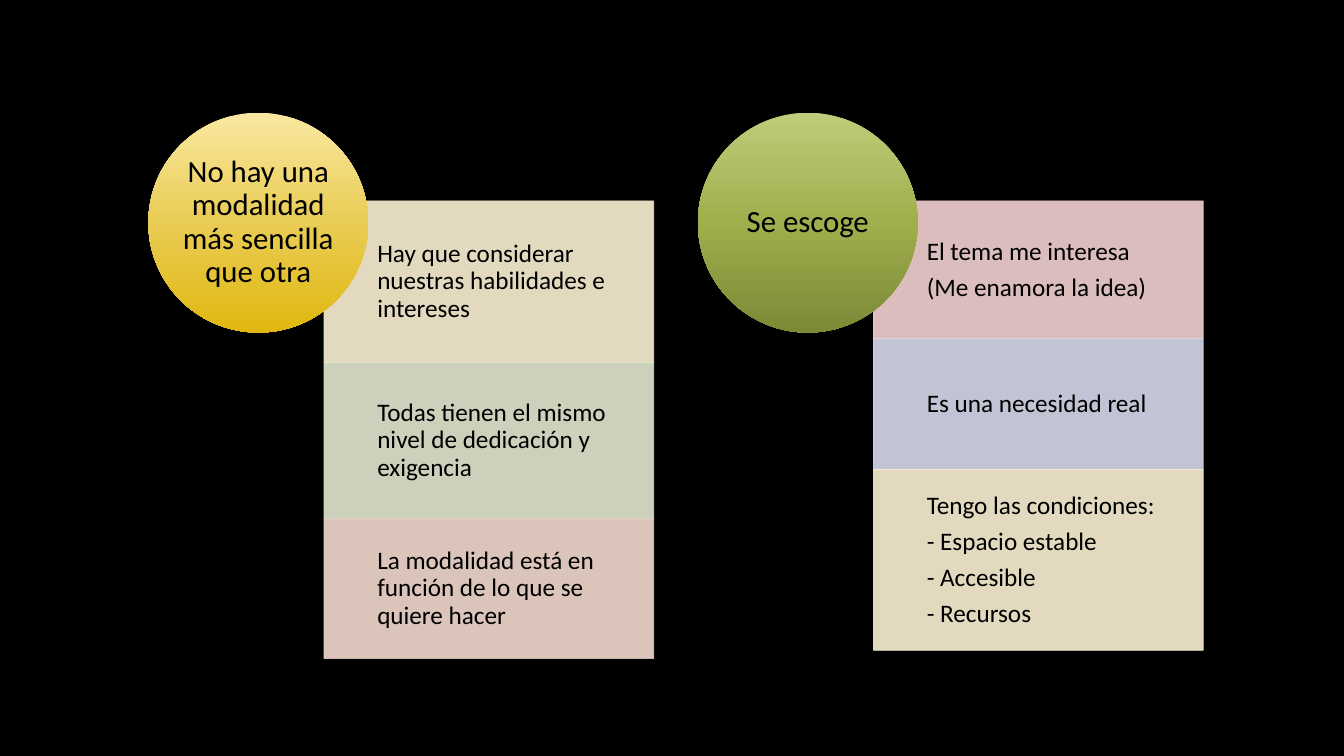
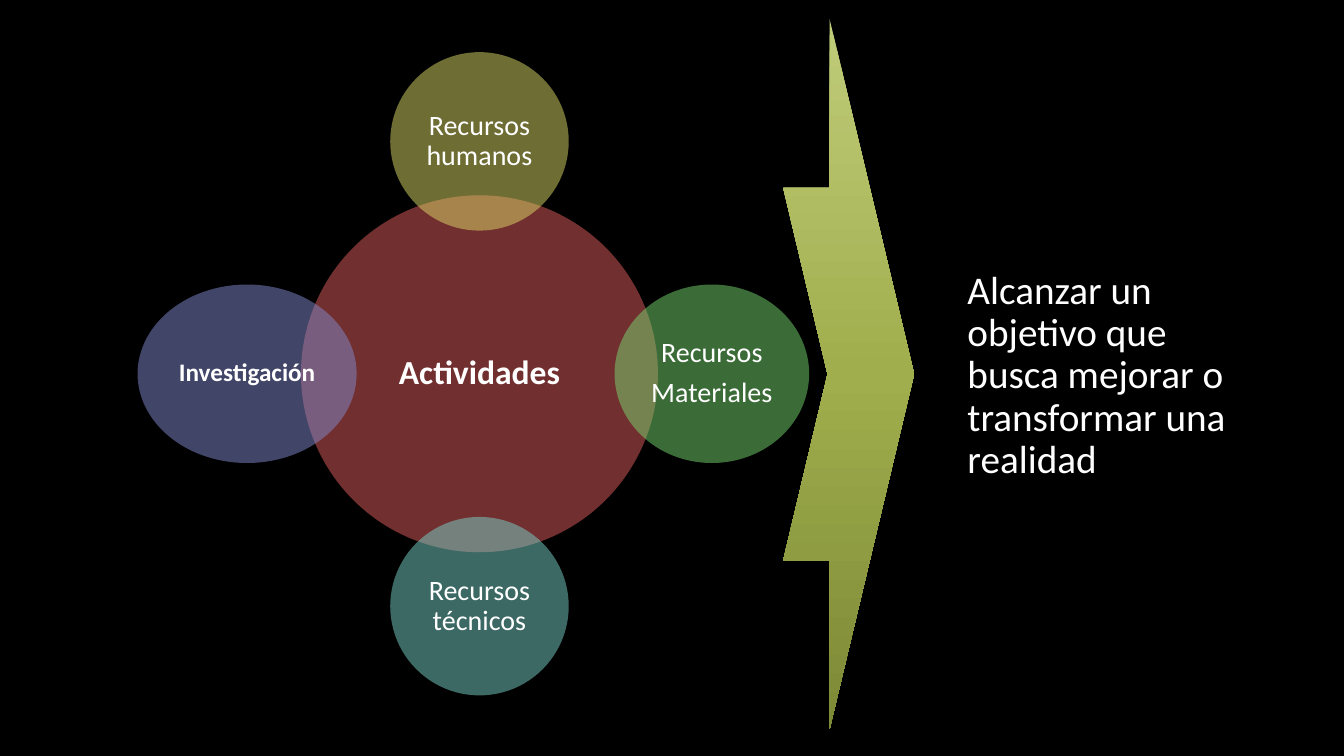
from copy import deepcopy
from lxml.etree import SubElement as Sub
from pptx import Presentation
from pptx.dml.color import RGBColor as RGB
from pptx.enum.shapes import MSO_SHAPE as Kind
from pptx.enum.text import MSO_ANCHOR as Anchor, MSO_AUTO_SIZE as Auto, PP_ALIGN as Align
from pptx.oxml.ns import qn
from pptx.util import Pt

BLACK = RGB(0x00, 0x00, 0x00)
WHITE = RGB(0xFF, 0xFF, 0xFF)
CREAM = RGB(0xFB, 0xF1, 0xD4)
SAGE = RGB(0xE3, 0xE8, 0xD1)
PEACH = RGB(0xF3, 0xDB, 0xCF)
PINK = RGB(0xF4, 0xD2, 0xD2)
LILAC = RGB(0xD8, 0xDA, 0xED)
RED = RGB(0xE3, 0x5F, 0x5F)
OLIVE = RGB(0xDD, 0xDA, 0x68)
GREEN = RGB(0x77, 0xD8, 0x71)
TEAL = RGB(0x7A, 0xD3, 0xCB)
BLUE = RGB(0x82, 0x8B, 0xCE)
GOLD = RGB(0xFA, 0xE8, 0xA1), RGB(0xE9, 0xCC, 0x54), RGB(0xE0, 0xB8, 0x10)
MOSS = RGB(0xC0, 0xCC, 0x79), RGB(0xA0, 0xAE, 0x4D), RGB(0x7D, 0x89, 0x36)


def write(shape, text, size=18, color=BLACK, bold=False, align=Align.CENTER,
          anchor=Anchor.MIDDLE, pad=(0, 0, 0, 0), gap=0.35):
    frame = shape.text_frame
    frame.word_wrap = True
    frame.vertical_anchor = anchor
    frame.margin_left, frame.margin_top, frame.margin_right, frame.margin_bottom = map(Pt, pad)
    frame.text = text
    for par in frame.paragraphs:
        par.alignment = align
        par.line_spacing = 0.9
        par.space_after = Pt(size * gap)
        font = par.font
        font.name, font.size, font.bold = "Calibri", Pt(size), bold
        font.color.rgb = color


def fade(shape, alpha):
    for tint in shape._element.spPr.iter(qn("a:srgbClr")):
        Sub(tint, qn("a:alpha")).set("val", str(alpha * 1000))


def blend(shape, colors):
    fill = shape.fill
    fill.gradient()
    fill.gradient_angle = 270
    stops = shape._element.spPr.find(".//" + qn("a:gsLst"))
    stops.append(deepcopy(stops[0]))
    for stop, color, place in zip(fill.gradient_stops, colors, (0, 0.5, 1)):
        stop.color.rgb = color
        stop.position = place


class Deck:
    def __init__(self):
        self.prs = Presentation()
        self.prs.slide_width, self.prs.slide_height = Pt(960), Pt(540)

    def page(self):
        self.slide = self.prs.slides.add_slide(self.prs.slide_layouts[6])
        fill = self.slide.background.fill
        fill.solid()
        fill.fore_color.rgb = BLACK

    def shape(self, kind, box, fill, alpha=100, edge=False):
        item = self.slide.shapes.add_shape(kind, *map(Pt, box))
        item.shadow.inherit = False
        if isinstance(fill, RGB):
            item.fill.solid()
            item.fill.fore_color.rgb = fill
        else:
            blend(item, fill)
        if edge:
            item.line.color.rgb = fill
            item.line.width = Pt(0.5)
        else:
            item.line.fill.background()
        if alpha < 100:
            fade(item, alpha)
        return item

    def disc(self, x, y, wide, high, fill, text, alpha=100, **style):
        box = x - wide / 2, y - high / 2, wide, high
        write(self.shape(Kind.OVAL, box, fill, alpha), text, **style)

    def panel(self, box, fill, text):
        item = self.shape(Kind.RECTANGLE, box, fill, 90, True)
        write(item, text, align=Align.LEFT, pad=(38, 10, 10, 10))

    def stack(self, x, fill, title, rows):
        top = 143.5
        for high, tint, text in rows:
            self.panel((x + 47, top, 235.5, high), tint, text)
            top += high
        self.disc(x, 159, 157, 157, fill, title, size=22)

    def arrow(self, box, fill, adjust):
        item = self.shape(Kind.NOTCHED_RIGHT_ARROW, box, fill)
        for i, val in enumerate(adjust):
            item.adjustments[i] = val

    def label(self, box, text, **style):
        item = self.slide.shapes.add_textbox(*map(Pt, box))
        write(item, text, align=Align.LEFT, anchor=Anchor.TOP,
              pad=(7.2, 3.6, 7.2, 3.6), gap=0, **style)
        item.text_frame.auto_size = Auto.SHAPE_TO_FIT_TEXT


def choice(deck):
    deck.page()
    deck.stack(184.5, GOLD, "No hay una modalidad más sencilla que otra", (
        (115.5, CREAM, "Hay que considerar nuestras habilidades e intereses"),
        (111.5, SAGE, "Todas tienen el mismo nivel de dedicación y exigencia"),
        (100, PEACH, "La modalidad está en función de lo que se quiere hacer"),
    ))
    deck.stack(577, MOSS, "Se escoge", (
        (98.5, PINK, "El tema me interesa\n(Me enamora la idea)"),
        (93.5, LILAC, "Es una necesidad real"),
        (129, CREAM, "Tengo las condiciones:\n- Espacio estable\n- Accesible\n- Recursos"),
    ))


def goal(deck):
    deck.page()
    x, y, reach, high = 342.5, 267, 166, 127.5
    deck.disc(x, y, 2 * high, 2 * high, RED, "Actividades", 50, size=24, color=WHITE, bold=True)
    for dx, dy, wide, fill, text, size, bold in (
        (0, -1, high, OLIVE, "Recursos humanos", 20, False),
        (1, 0, 139, GREEN, "Recursos\nMateriales", 20, False),
        (0, 1, high, TEAL, "Recursos técnicos", 20, False),
        (-1, 0, 156.5, BLUE, "Investigación", 18, True),
    ):
        deck.disc(x + dx * reach, y + dy * reach, wide, high, fill, text, 50,
                  size=size, color=WHITE, bold=bold)
    deck.arrow((559.5, 13.5, 93.5, 507.5), MOSS, (0.524, 0.646))
    deck.label((684, 189.5, 215.5, 160),
               "Alcanzar un objetivo que busca mejorar o transformar una realidad",
               size=28, color=WHITE)


def main():
    deck = Deck()
    choice(deck)
    goal(deck)
    deck.prs.save("out.pptx")


if __name__ == "__main__":
    main()
